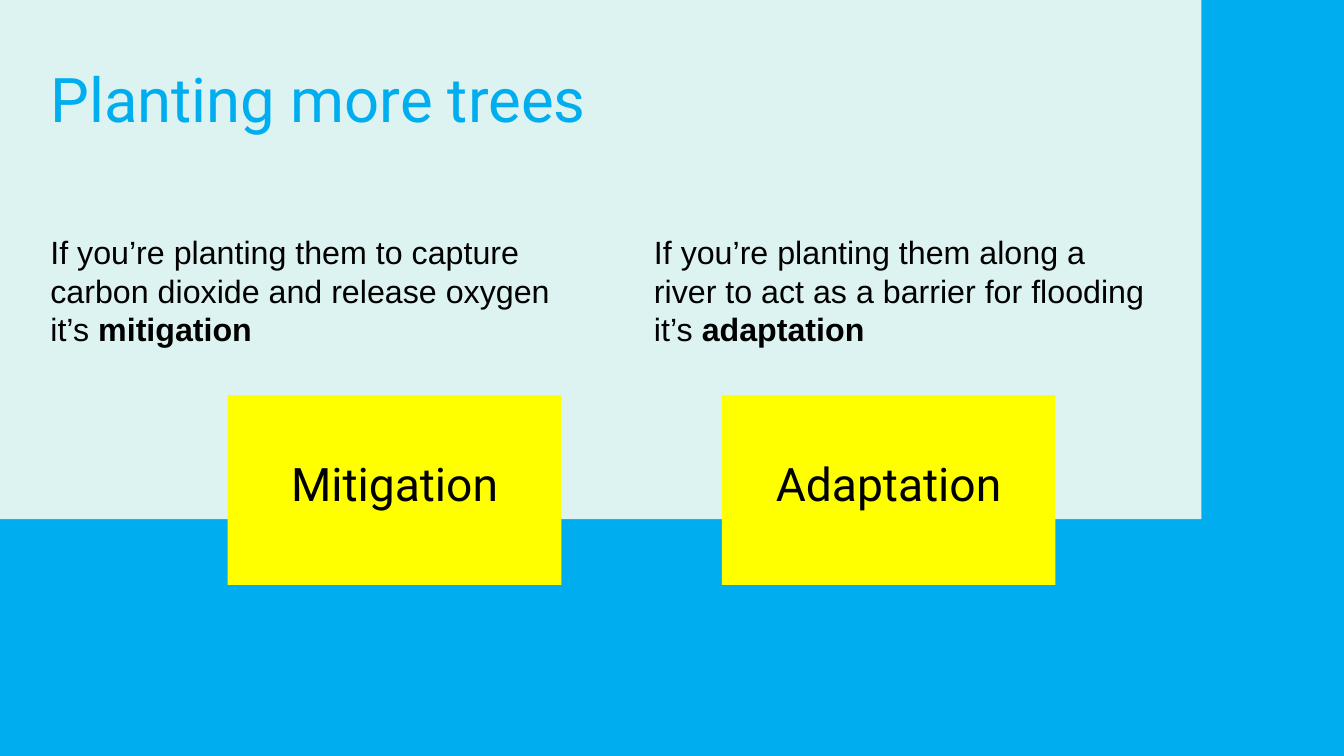
import pptx
import pptx.util
import pptx.dml.color
import pptx.enum.shapes
import pptx.enum.text
import pptx.oxml.ns
import lxml.etree

Cm = pptx.util.Cm
ALIGN = pptx.enum.text.PP_ALIGN
ANCHOR = pptx.enum.text.MSO_ANCHOR
RECTANGLE = pptx.enum.shapes.MSO_SHAPE.RECTANGLE

# Content
BLUE, MINT, YELLOW, BLACK = "00AEEF", "DDF3F1", "FFFF00", "000000"
TITLE = "Planting more trees"
# explanation, bold ending, text left and width, card label, card left
COLUMNS = [
    ("If you’re planting them to capture carbon dioxide and release oxygen it’s ",
     "mitigation", 1.02, 13.31, "Mitigation", 5.74),
    ("If you’re planting them along a river to act as a barrier for flooding it’s ",
     "adaptation", 16.23, 13.0, "Adaptation", 18.19),
]
TEXT_TOP, TEXT_HEIGHT = 5.61, 3.45
CARD_TOP, CARD_WIDTH, CARD_HEIGHT = 9.96, 8.41, 4.78
INSET = 0.25


def color(value):
    return pptx.dml.color.RGBColor.from_string(value)


def place(shape, left, top, width, height):
    shape.left, shape.top = Cm(left), Cm(top)
    shape.width, shape.height = Cm(width), Cm(height)


def add_rectangle(left, top, width, height, fill):
    shape = slide.shapes.add_shape(
        RECTANGLE, Cm(left), Cm(top), Cm(width), Cm(height))
    shape.shadow.inherit = False
    shape.fill.solid()
    shape.fill.fore_color.rgb = color(fill)
    shape.line.fill.background()
    return shape


def format_text(shape, font, size, ink, align, anchor, spacing=1.0):
    frame = shape.text_frame
    frame.word_wrap = True
    frame.auto_size = pptx.enum.text.MSO_AUTO_SIZE.NONE
    frame.vertical_anchor = anchor
    frame.margin_left = frame.margin_right = Cm(INSET)
    frame.margin_top = frame.margin_bottom = Cm(INSET)
    paragraph = frame.paragraphs[0]
    paragraph.alignment = align
    paragraph.line_spacing = spacing
    paragraph.space_before = pptx.util.Pt(0)
    for run in paragraph.runs:
        run.font.name = font
        run.font.size = pptx.util.Pt(size)
        run.font.color.rgb = color(ink)


def remove_bullet(paragraph):
    properties = paragraph._p.get_or_add_pPr()
    properties.set("marL", "0")
    properties.set("indent", "0")
    lxml.etree.SubElement(properties, pptx.oxml.ns.qn("a:buNone"))


# Slide and background
presentation = pptx.Presentation()
presentation.slide_width, presentation.slide_height = Cm(33.87), Cm(19.05)
slide = presentation.slides.add_slide(
    presentation.slide_layouts.get_by_name("Two Content"))
slide.background.fill.solid()
slide.background.fill.fore_color.rgb = color(BLUE)
title, *bodies = list(slide.placeholders)[:3]

# Panel behind the placeholders
panel = add_rectangle(0, 0, 30.28, 13.08, MINT)
title.element.addprevious(panel.element)

# Title
place(title, 1.02, 1.5, 28.47, 2.21)
title.text_frame.text = TITLE
format_text(title, "Roboto", 44, BLUE, ALIGN.LEFT, ANCHOR.TOP, 0.9)

# Explanations and their cards
for body, column in zip(bodies, COLUMNS):
    explanation, ending, left, width, label, card_left = column
    place(body, left, TEXT_TOP, width, TEXT_HEIGHT)
    body.text_frame.text = explanation
    paragraph = body.text_frame.paragraphs[0]
    bold_run = paragraph.add_run()
    bold_run.text = ending
    bold_run.font.bold = True
    format_text(body, "Arial", 23, BLACK, ALIGN.LEFT, ANCHOR.TOP)
    remove_bullet(paragraph)

    card = add_rectangle(card_left, CARD_TOP, CARD_WIDTH, CARD_HEIGHT, YELLOW)
    card.text_frame.text = label
    format_text(card, "Roboto", 33, BLACK, ALIGN.CENTER, ANCHOR.MIDDLE)
    card.text_frame.margin_bottom = Cm(0.6)  # lifts the label slightly

presentation.save("out.pptx")
